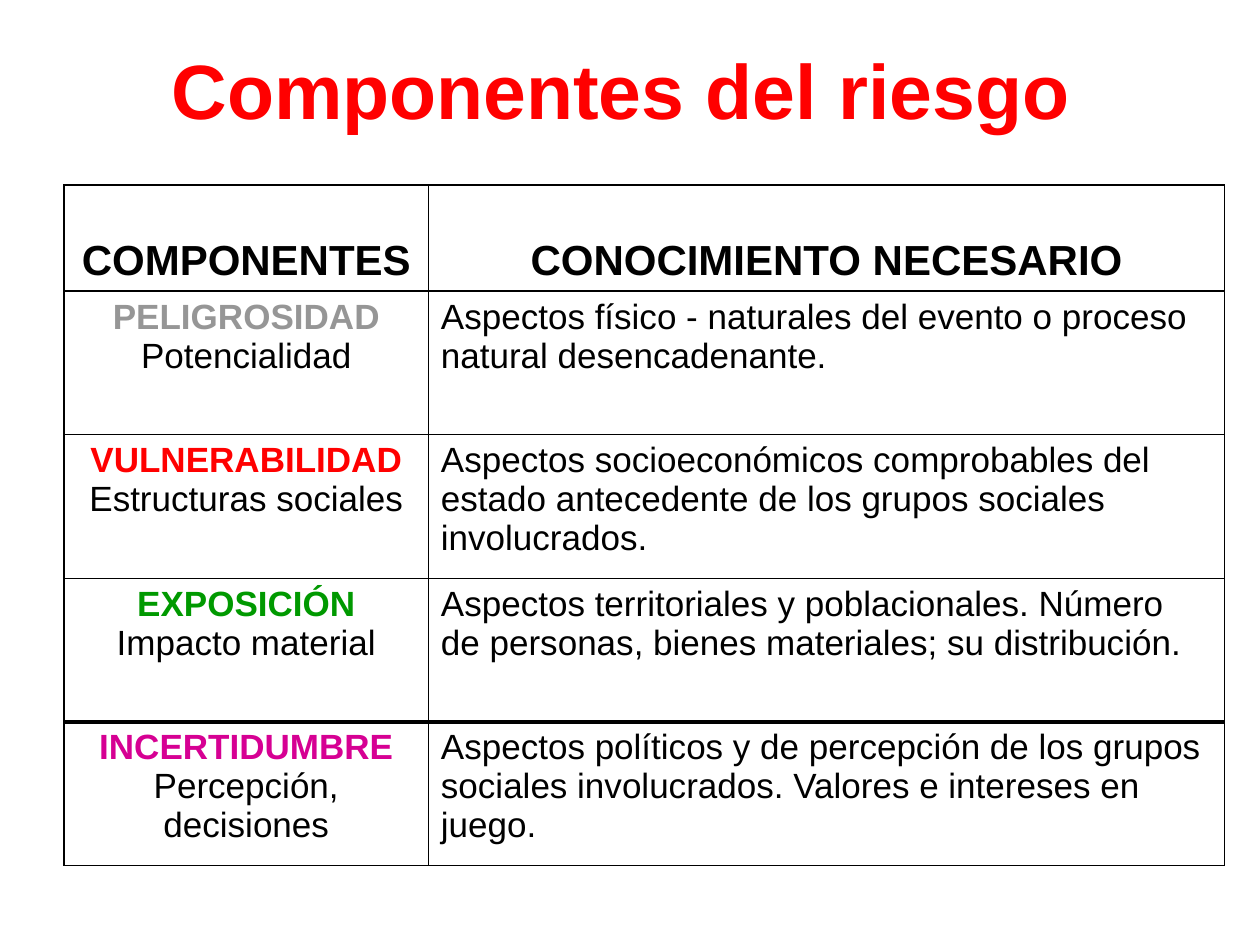
from dataclasses import dataclass

from lxml.etree import SubElement
from pptx import Presentation
from pptx.dml.color import RGBColor as RGB
from pptx.enum.text import MSO_ANCHOR as Anchor, PP_ALIGN as Align
from pptx.oxml.ns import qn
from pptx.util import Inches, Pt

FONT = "Arial"
COLORS = {
    "black": "000000",
    "red": "FF0000",
    "gray": "969696",
    "green": "009900",
    "magenta": "D60093",
}
WIDTH, HEIGHT = 10, 7.5
COLUMNS = (2.89, 6.32)
HEADER_ROW, BODY_ROW = 0.84, 1.14
THIN, THICK = 1, 3


@dataclass
class Component:
    name: str
    color: str
    aspect: str
    knowledge: str
    top: int = THIN
    bottom: int = THIN


HEADERS = ("COMPONENTES", "CONOCIMIENTO NECESARIO")
COMPONENTS = [
    Component("PELIGROSIDAD", "gray", "Potencialidad",
              "Aspectos físico - naturales del evento o proceso natural desencadenante."),
    Component("VULNERABILIDAD", "red", "Estructuras sociales",
              "Aspectos socioeconómicos comprobables del estado antecedente "
              "de los grupos sociales involucrados."),
    Component("EXPOSICIÓN", "green", "Impacto material",
              "Aspectos territoriales y poblacionales. Número de personas, "
              "bienes materiales; su distribución.", bottom=THICK),
    Component("INCERTIDUMBRE", "magenta", "Percepción, decisiones",
              "Aspectos políticos y de percepción de los grupos sociales "
              "involucrados. Valores e intereses en juego.", top=THICK),
]


def add_run(p, text: str, size: int, color: str = "black", bold: bool = False,
            align: Align = Align.CENTER) -> None:
    p.alignment = align
    r = p.add_run()
    r.text = text
    r.font.name = FONT
    r.font.size = Pt(size)
    r.font.bold = bold
    r.font.color.rgb = RGB.from_string(COLORS[color])


def style_cell(cell, top: int = THIN, bottom: int = THIN) -> None:
    """Draw the four borders and leave the cell unfilled."""
    tc_pr = cell._tc.get_or_add_tcPr()
    for side, width in (("L", THIN), ("R", THIN), ("T", top), ("B", bottom)):
        ln = SubElement(tc_pr, qn(f"a:ln{side}"), w=str(Pt(width)))
        fill = SubElement(ln, qn("a:solidFill"))
        SubElement(fill, qn("a:srgbClr"), val=COLORS["black"])
    cell.fill.background()


def add_title(slide, text: str) -> None:
    sp = slide.shapes.add_textbox(Inches(0.51), Inches(0.13), Inches(8.84), Inches(1.15))
    tf = sp.text_frame
    tf.word_wrap = True
    tf.vertical_anchor = Anchor.MIDDLE
    add_run(tf.paragraphs[0], text, 44, "red", bold=True)


def add_component_table(slide) -> None:
    rows = [HEADER_ROW] + [BODY_ROW] * len(COMPONENTS)
    table = slide.shapes.add_table(
        len(rows), len(COLUMNS), Inches(0.51), Inches(1.47),
        Inches(sum(COLUMNS)), Inches(sum(rows))).table
    table.first_row = table.horz_banding = False
    for column, width in zip(table.columns, COLUMNS):
        column.width = Inches(width)
    for row, height in zip(table.rows, rows):
        row.height = Inches(height)

    # Header row
    for col, text in enumerate(HEADERS):
        cell = table.cell(0, col)
        style_cell(cell)
        cell.vertical_anchor = Anchor.BOTTOM
        add_run(cell.text_frame.paragraphs[0], text, 24, bold=True)

    # One row per risk component
    for row, item in enumerate(COMPONENTS, start=1):
        label, detail = table.cell(row, 0), table.cell(row, 1)
        for cell in (label, detail):
            style_cell(cell, item.top, item.bottom)
        tf = label.text_frame
        add_run(tf.paragraphs[0], item.name, 20, item.color, bold=True)
        add_run(tf.add_paragraph(), item.aspect, 20)
        add_run(detail.text_frame.paragraphs[0], item.knowledge, 20, align=Align.LEFT)


def main() -> None:
    prs = Presentation()
    prs.slide_width, prs.slide_height = Inches(WIDTH), Inches(HEIGHT)
    slide = prs.slides.add_slide(prs.slide_layouts[6])
    add_title(slide, "Componentes del riesgo")
    add_component_table(slide)
    prs.save("out.pptx")


if __name__ == "__main__":
    main()
